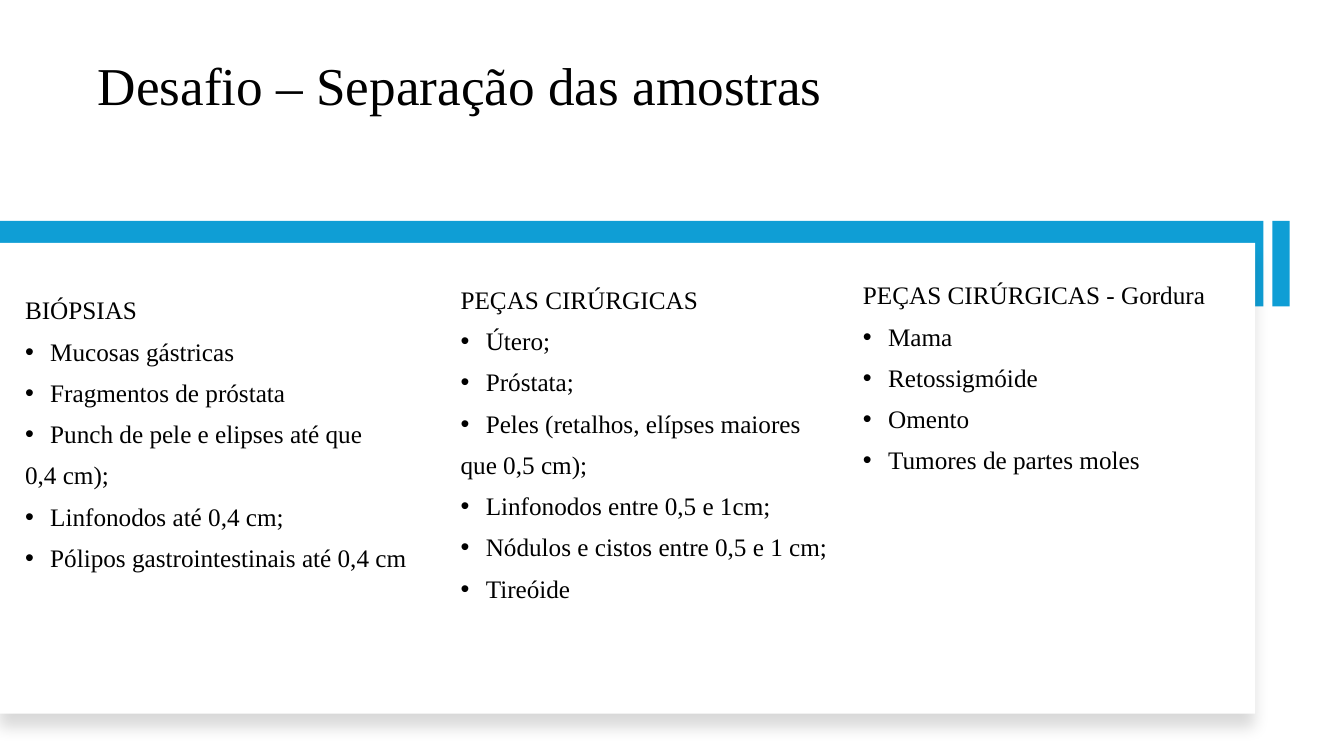
from dataclasses import dataclass

from lxml import etree
from pptx import Presentation
from pptx.dml.color import RGBColor
from pptx.enum.shapes import MSO_SHAPE
from pptx.enum.text import MSO_ANCHOR
from pptx.oxml.ns import qn
from pptx.util import Inches, Pt

RECTANGLE = MSO_SHAPE.RECTANGLE
TOP, MIDDLE, BOTTOM = MSO_ANCHOR.TOP, MSO_ANCHOR.MIDDLE, MSO_ANCHOR.BOTTOM

BLACK = RGBColor(0x00, 0x00, 0x00)
WHITE = RGBColor(0xFF, 0xFF, 0xFF)
BLUE = RGBColor(0x0F, 0x9E, 0xD5)

TITLE_FONT = {"name": "Times New Roman", "size": Pt(38)}
BODY_FONT = {"name": "Times New Roman", "size": Pt(18)}
LINE_SPACING = 0.9
PARAGRAPH_GAP = Pt(10)
BULLET_INDENT = Inches(0.25)


@dataclass(frozen=True)
class Box:
    left: float
    top: float
    width: float
    height: float

    def lengths(self) -> list:
        return [Inches(value) for value in (self.left, self.top, self.width, self.height)]


@dataclass(frozen=True)
class Bar:
    box: Box
    color: RGBColor
    rotation: int = 0
    shadow: bool = False


@dataclass(frozen=True)
class Line:
    text: str
    bullet: bool = True


@dataclass(frozen=True)
class TextBlock:
    box: Box
    anchor: MSO_ANCHOR
    lines: list[Line]
    font: dict
    bottom_margin: float = 0.05


BARS = [
    Bar(Box(0, 2.19, 12.53, 0.85), BLUE),
    Bar(Box(0, 2.41, 12.45, 4.67), WHITE, shadow=True),
    Bar(Box(12.28, 2.53, 0.85, 0.17), BLUE, rotation=90),
]

TITLE = TextBlock(
    Box(0.87, 0.42, 11.09, 1.42), BOTTOM,
    [Line("Desafio – Separação das amostras", bullet=False)],
    TITLE_FONT, bottom_margin=0.68,
)

COLUMNS = [
    TextBlock(Box(4.47, 2.43, 4.96, 3.98), MIDDLE, [
        Line("PEÇAS CIRÚRGICAS", bullet=False),
        Line("Útero;"),
        Line("Próstata;"),
        Line("Peles (retalhos, elípses maiores"),
        Line("que 0,5 cm);", bullet=False),
        Line("Linfonodos entre 0,5 e 1cm;"),
        Line("Nódulos e cistos entre 0,5 e 1 cm;"),
        Line("Tireóide"),
    ], BODY_FONT),
    TextBlock(Box(8.46, 2.76, 5.02, 3.64), TOP, [
        Line("PEÇAS CIRÚRGICAS - Gordura", bullet=False),
        Line("Mama"),
        Line("Retossigmóide"),
        Line("Omento"),
        Line("Tumores de partes moles"),
    ], BODY_FONT),
    TextBlock(Box(0.15, 2.33, 4.96, 3.98), MIDDLE, [
        Line("BIÓPSIAS", bullet=False),
        Line("Mucosas gástricas"),
        Line("Fragmentos de próstata"),
        Line("Punch de pele e elipses até que"),
        Line("0,4 cm);", bullet=False),
        Line("Linfonodos até 0,4 cm;"),
        Line("Pólipos gastrointestinais até 0,4 cm"),
    ], BODY_FONT),
]


def add_soft_shadow(shape) -> None:
    effects = shape._element.spPr.find(qn("a:effectLst"))
    shadow = etree.SubElement(
        effects, qn("a:outerShdw"), blurRad=str(Pt(11)), dist=str(Pt(10)),
        dir=str(90 * 60000), algn="t", rotWithShape="0",
    )
    color = etree.SubElement(shadow, qn("a:srgbClr"), val=str(BLACK))
    etree.SubElement(color, qn("a:alpha"), val="15000")


def add_bar(slide, bar: Bar) -> None:
    shape = slide.shapes.add_shape(RECTANGLE, *bar.box.lengths())
    shape.rotation = bar.rotation
    shape.fill.solid()
    shape.fill.fore_color.rgb = bar.color
    shape.line.fill.background()
    shape.shadow.inherit = False
    if bar.shadow:
        add_soft_shadow(shape)


def add_bullet(paragraph) -> None:
    properties = paragraph._p.get_or_add_pPr()
    properties.set("marL", str(BULLET_INDENT))
    properties.set("indent", str(-BULLET_INDENT))
    etree.SubElement(properties, qn("a:buFont"), typeface="Arial")
    etree.SubElement(properties, qn("a:buChar"), char="•")


def add_text_block(slide, block: TextBlock) -> None:
    frame = slide.shapes.add_textbox(*block.box.lengths()).text_frame
    frame.word_wrap = True
    frame.vertical_anchor = block.anchor
    frame.margin_bottom = Inches(block.bottom_margin)
    for index, line in enumerate(block.lines):
        paragraph = frame.add_paragraph() if index else frame.paragraphs[0]
        if line.bullet:
            add_bullet(paragraph)
        paragraph.line_spacing = LINE_SPACING
        if index:
            paragraph.space_before = PARAGRAPH_GAP
        run = paragraph.add_run()
        run.text = line.text
        for name, value in block.font.items():
            setattr(run.font, name, value)
        run.font.color.rgb = BLACK


def main() -> None:
    presentation = Presentation()
    presentation.slide_width = Inches(13.33)
    presentation.slide_height = Inches(7.5)
    slide = presentation.slides.add_slide(presentation.slide_layouts[6])
    for bar in BARS:
        add_bar(slide, bar)
    for block in [TITLE, *COLUMNS]:
        add_text_block(slide, block)
    presentation.save("out.pptx")


if __name__ == "__main__":
    main()
